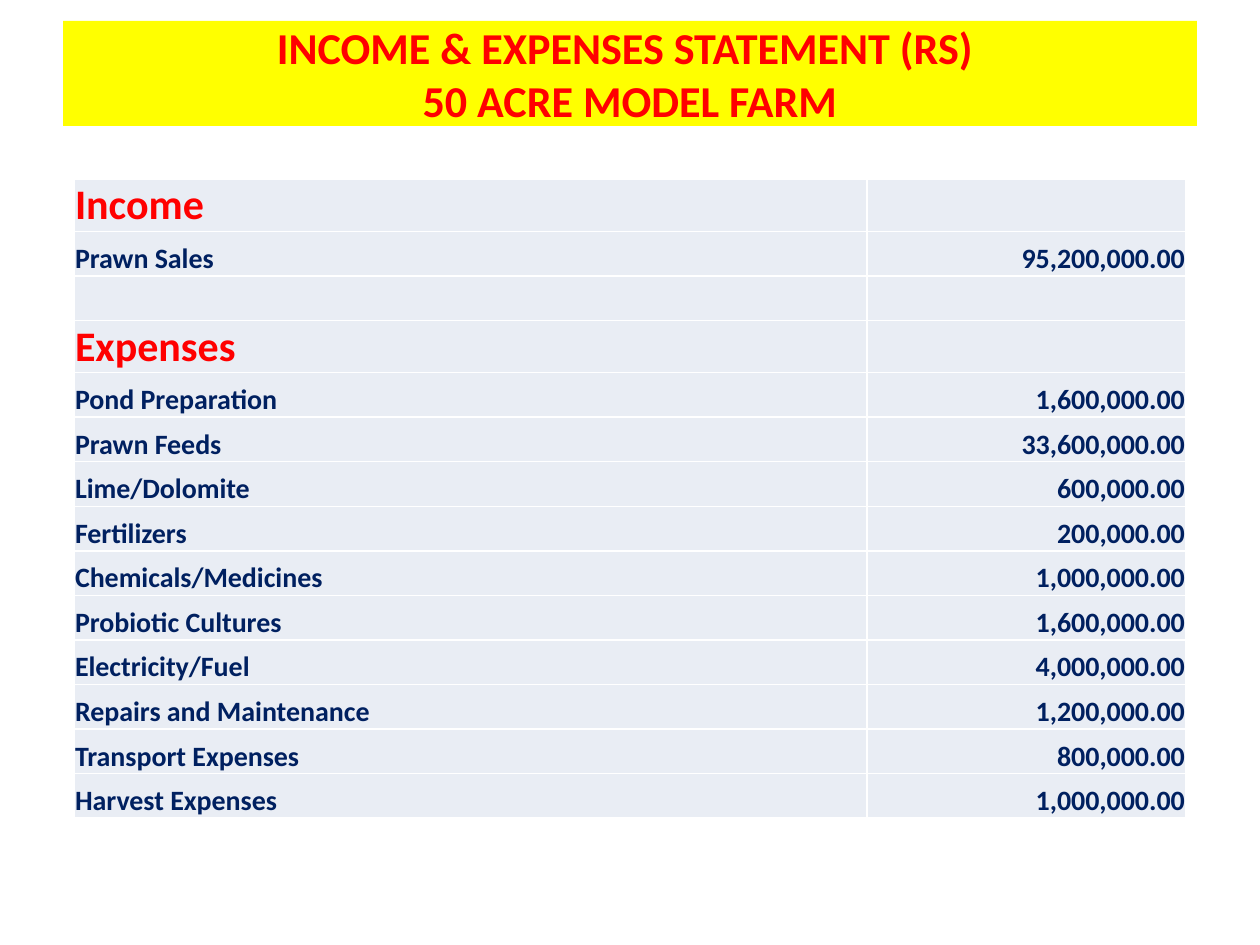
from lxml import etree
from pptx import Presentation
from pptx import util as u
from pptx.dml.color import RGBColor
from pptx.enum import text
from pptx.oxml import ns

EMU_PER_PX = 914400 / 126
FONT = "Calibri"
RED = RGBColor(0xFF, 0x00, 0x00)
YELLOW = RGBColor(0xFF, 0xFF, 0x00)
NAVY = RGBColor(0x00, 0x20, 0x60)
PALE_BLUE = RGBColor(0xE9, 0xED, 0xF4)
WHITE = RGBColor(0xFF, 0xFF, 0xFF)

TITLE = "INCOME & EXPENSES STATEMENT (RS) \n50 ACRE MODEL FARM"
HEADINGS = ("Income", "Expenses")
STATEMENT = [
    ("Income", ""),
    ("Prawn Sales", "95,200,000.00"),
    ("", ""),
    ("Expenses", ""),
    ("Pond Preparation", "1,600,000.00"),
    ("Prawn Feeds", "33,600,000.00"),
    ("Lime/Dolomite", "600,000.00"),
    ("Fertilizers", "200,000.00"),
    ("Chemicals/Medicines", "1,000,000.00"),
    ("Probiotic Cultures", "1,600,000.00"),
    ("Electricity/Fuel", "4,000,000.00"),
    ("Repairs and Maintenance", "1,200,000.00"),
    ("Transport Expenses", "800,000.00"),
    ("Harvest Expenses", "1,000,000.00"),
]


def px(length):
    return u.Emu(round(length * EMU_PER_PX))


def format_runs(paragraph, size, color):
    for run in paragraph.runs:
        run.font.name = FONT
        run.font.size = u.Pt(size)
        run.font.bold = True
        run.font.color.rgb = color


def set_title(slide):
    title = slide.shapes.title
    title.left, title.top, title.width, title.height = px(63), px(21), px(1134), px(105)
    title.fill.solid()
    title.fill.fore_color.rgb = YELLOW
    frame = title.text_frame
    frame.auto_size = text.MSO_AUTO_SIZE.NONE
    frame.vertical_anchor = text.MSO_ANCHOR.MIDDLE
    paragraph = frame.paragraphs[0]
    paragraph.text = TITLE
    paragraph.alignment = text.PP_ALIGN.CENTER
    format_runs(paragraph, 25.2, RED)


def add_borders(cell):
    properties = cell._tc.get_or_add_tcPr()
    for side in ("lnL", "lnR", "lnT", "lnB"):
        line = etree.SubElement(properties, ns.qn(f"a:{side}"), w=str(u.Pt(1)))
        fill = etree.SubElement(line, ns.qn("a:solidFill"))
        etree.SubElement(fill, ns.qn("a:srgbClr"), val=str(WHITE))


def fill_cell(cell, content, alignment, size, color):
    add_borders(cell)
    cell.fill.solid()
    cell.fill.fore_color.rgb = PALE_BLUE
    cell.margin_left = cell.margin_right = cell.margin_top = px(1)
    cell.margin_bottom = 0
    cell.vertical_anchor = text.MSO_ANCHOR.BOTTOM
    paragraph = cell.text_frame.paragraphs[0]
    paragraph.text = content
    paragraph.alignment = alignment
    format_runs(paragraph, size, color)


def add_statement(slide):
    height, heading_height = px(639), px(52)
    item_count = len(STATEMENT) - len(HEADINGS)
    item_height = (height - len(HEADINGS) * heading_height) // item_count
    frame = slide.shapes.add_table(len(STATEMENT), 2, px(74), px(179), px(1112), height)
    table = frame.table
    table.first_row = table.horz_banding = False
    table.columns[0].width, table.columns[1].width = px(793), px(319)

    for row, (label, amount) in zip(table.rows, STATEMENT):
        is_heading = label in HEADINGS
        row.height = heading_height if is_heading else item_height
        size, color = (24, RED) if is_heading else (16, NAVY)
        fill_cell(row.cells[0], label, text.PP_ALIGN.LEFT, size, color)
        fill_cell(row.cells[1], amount, text.PP_ALIGN.RIGHT, size, color)


def main():
    presentation = Presentation()
    presentation.slide_width, presentation.slide_height = px(1260), px(945)
    # Title Only layout
    slide = presentation.slides.add_slide(presentation.slide_layouts[5])
    # Heading band
    set_title(slide)
    # Income and expenses
    add_statement(slide)
    presentation.save("out.pptx")


if __name__ == "__main__":
    main()
